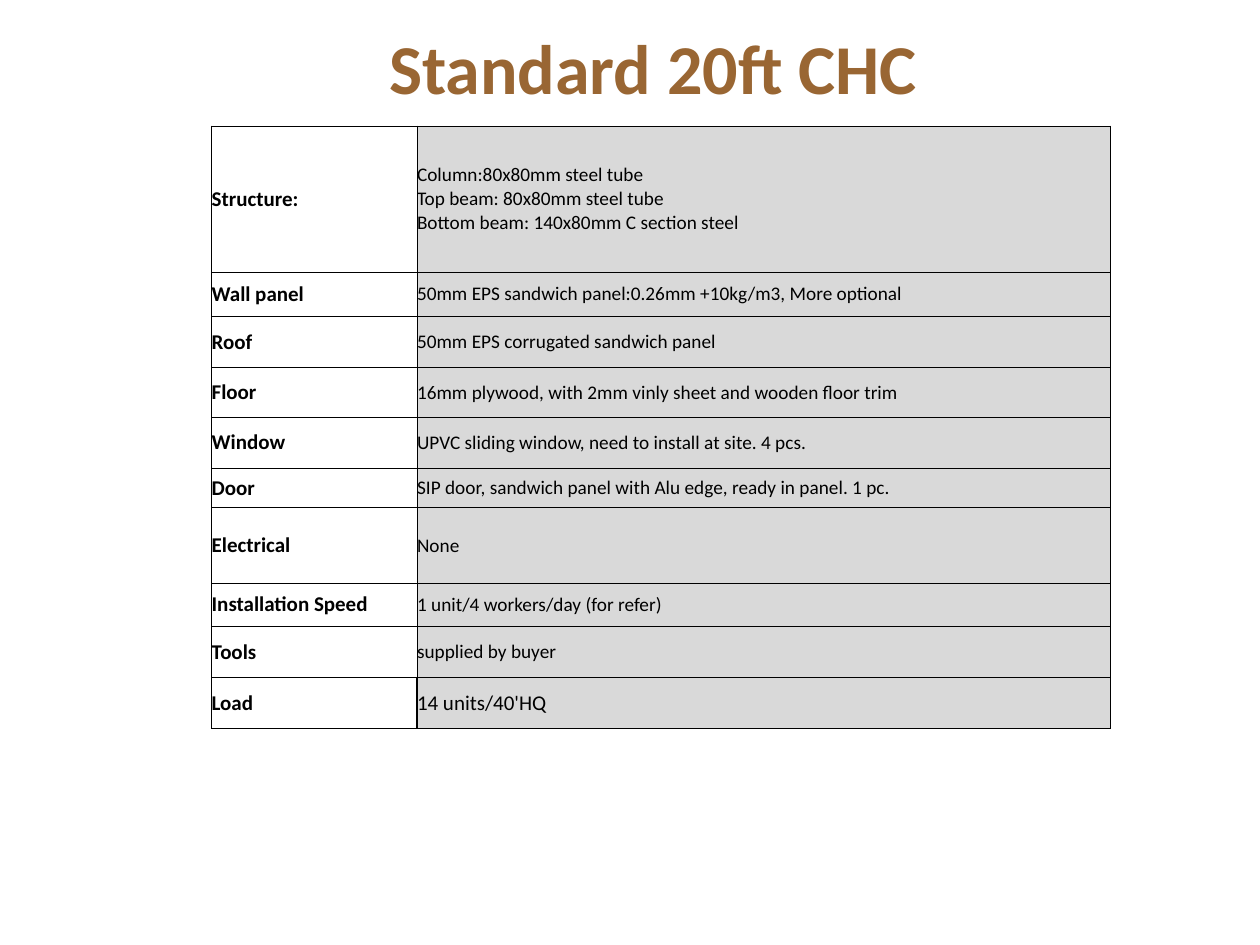
from dataclasses import dataclass
from typing import NamedTuple

from lxml import etree
from pptx import Presentation
from pptx.dml.color import RGBColor
from pptx.enum import text
from pptx.oxml import ns
from pptx.util import Inches, Pt


@dataclass(frozen=True)
class Theme:
    font: str = "Calibri"
    title: str = "996633"
    ink: str = "000000"
    value_fill: str = "D9D9D9"
    title_size: float = 40
    label_size: float = 12
    value_size: float = 11
    border: float = 0.5
    divider: float = 0.75


class SpecRow(NamedTuple):
    label: str
    value: str
    height: float
    value_size: float = Theme.value_size
    divider: float = Theme.border


THEME = Theme()
COLUMN_WIDTHS = (1.63, 5.5)
SPECS = [
    SpecRow("Structure:", "Column:80x80mm steel tube\nTop beam: 80x80mm steel tube\n"
            "Bottom beam: 140x80mm C section steel", 1.16),
    SpecRow("Wall panel", "50mm EPS sandwich panel:0.26mm +10kg/m3, More optional", 0.35),
    SpecRow("Roof", "50mm EPS corrugated sandwich panel", 0.41),
    SpecRow("Floor", "16mm plywood, with 2mm vinly sheet and wooden floor trim", 0.39),
    SpecRow("Window", "UPVC sliding window, need to install at site. 4 pcs.", 0.41),
    SpecRow("Door", "SIP door, sandwich panel with Alu edge, ready in panel. 1 pc.", 0.31),
    SpecRow("Electrical", "None", 0.6),
    SpecRow("Installation Speed", "1 unit/4 workers/day (for refer)", 0.34),
    SpecRow("Tools", "supplied by buyer", 0.41),
    SpecRow("Load", "14 units/40'HQ", 0.4, THEME.label_size, THEME.divider),
]


def style_text(tf, size: float, color: str, bold: bool) -> None:
    for p in tf.paragraphs:
        for r in p.runs:
            r.font.name = THEME.font
            r.font.size = Pt(size)
            r.font.bold = bold
            r.font.color.rgb = RGBColor.from_string(color)


def set_border(cell, side: str, width: float) -> None:
    """Draw one cell edge; side is L, R, T or B."""
    tc_pr = cell._tc.get_or_add_tcPr()
    ln = etree.SubElement(tc_pr, ns.qn(f"a:ln{side}"), w=str(Pt(width)))
    fill = etree.SubElement(ln, ns.qn("a:solidFill"))
    etree.SubElement(fill, ns.qn("a:srgbClr"), val=THEME.ink)


def fill_cell(cell, content: str, size: float, bold: bool, borders: dict[str, float]) -> None:
    cell.margin_left = cell.margin_right = cell.margin_top = cell.margin_bottom = 0
    cell.vertical_anchor = text.MSO_ANCHOR.MIDDLE
    cell.text_frame.text = content
    style_text(cell.text_frame, size, THEME.ink, bold)
    for side in "LRTB":
        set_border(cell, side, borders.get(side, THEME.border))


def add_title(slide, content: str) -> None:
    box = slide.shapes.add_textbox(Inches(1.16), Inches(0.05), Inches(8.17), Inches(0.95))
    tf = box.text_frame
    tf.word_wrap = True
    tf.vertical_anchor = text.MSO_ANCHOR.MIDDLE
    tf.text = content
    tf.paragraphs[0].alignment = text.PP_ALIGN.CENTER
    style_text(tf, THEME.title_size, THEME.title, True)


def add_spec_table(slide, specs: list[SpecRow]) -> None:
    height = sum(spec.height for spec in specs)
    table = slide.shapes.add_table(
        len(specs), len(COLUMN_WIDTHS), Inches(1.68), Inches(1),
        Inches(sum(COLUMN_WIDTHS)), Inches(height)).table
    table.first_row = table.horz_banding = False
    for column, width in zip(table.columns, COLUMN_WIDTHS):
        column.width = Inches(width)
    for i, spec in enumerate(specs):
        table.rows[i].height = Inches(spec.height)
        label, value = table.cell(i, 0), table.cell(i, 1)
        fill_cell(label, spec.label, THEME.label_size, True, {"R": spec.divider})
        label.fill.background()
        fill_cell(value, spec.value, spec.value_size, False, {"L": spec.divider})
        value.fill.solid()
        value.fill.fore_color.rgb = RGBColor.from_string(THEME.value_fill)


def main() -> None:
    prs = Presentation()
    prs.slide_width, prs.slide_height = Inches(10), Inches(7.5)
    slide = prs.slides.add_slide(prs.slide_layouts[6])
    add_title(slide, "Standard 20ft CHC ")
    add_spec_table(slide, SPECS)
    prs.save("out.pptx")


if __name__ == "__main__":
    main()
